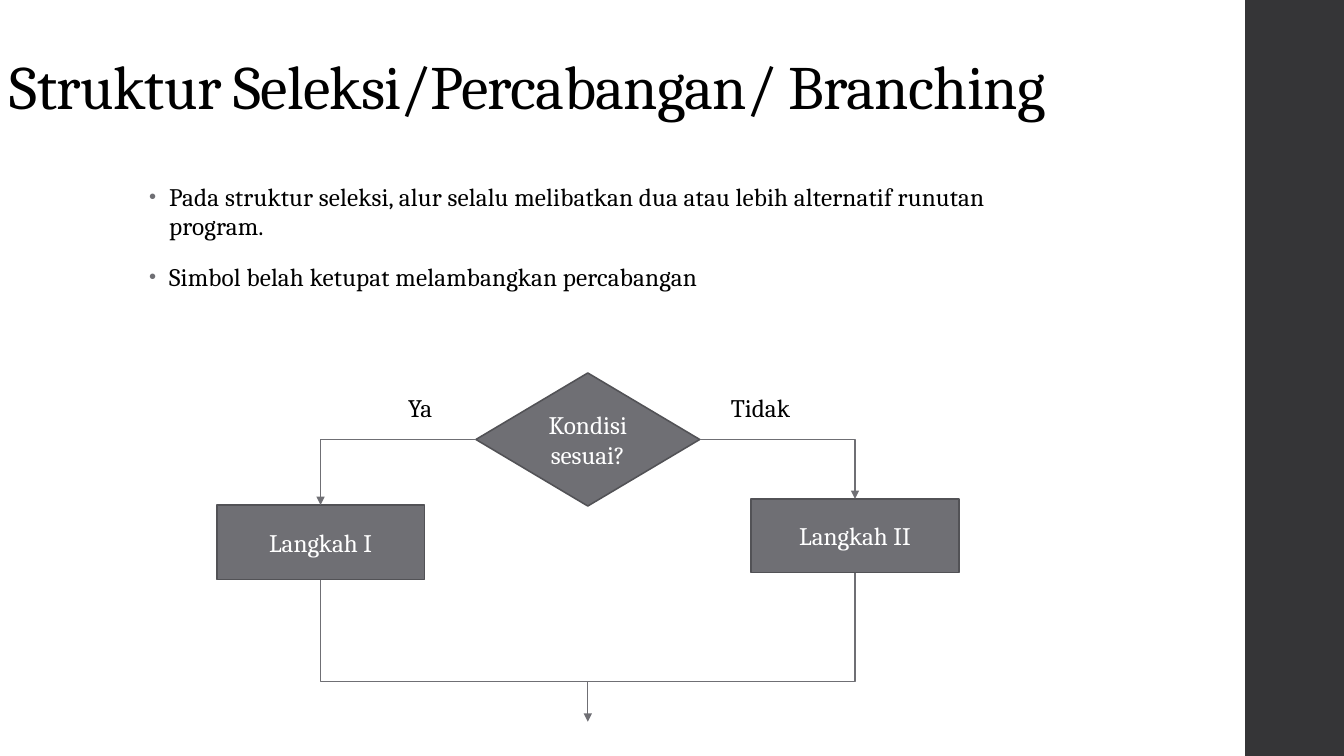
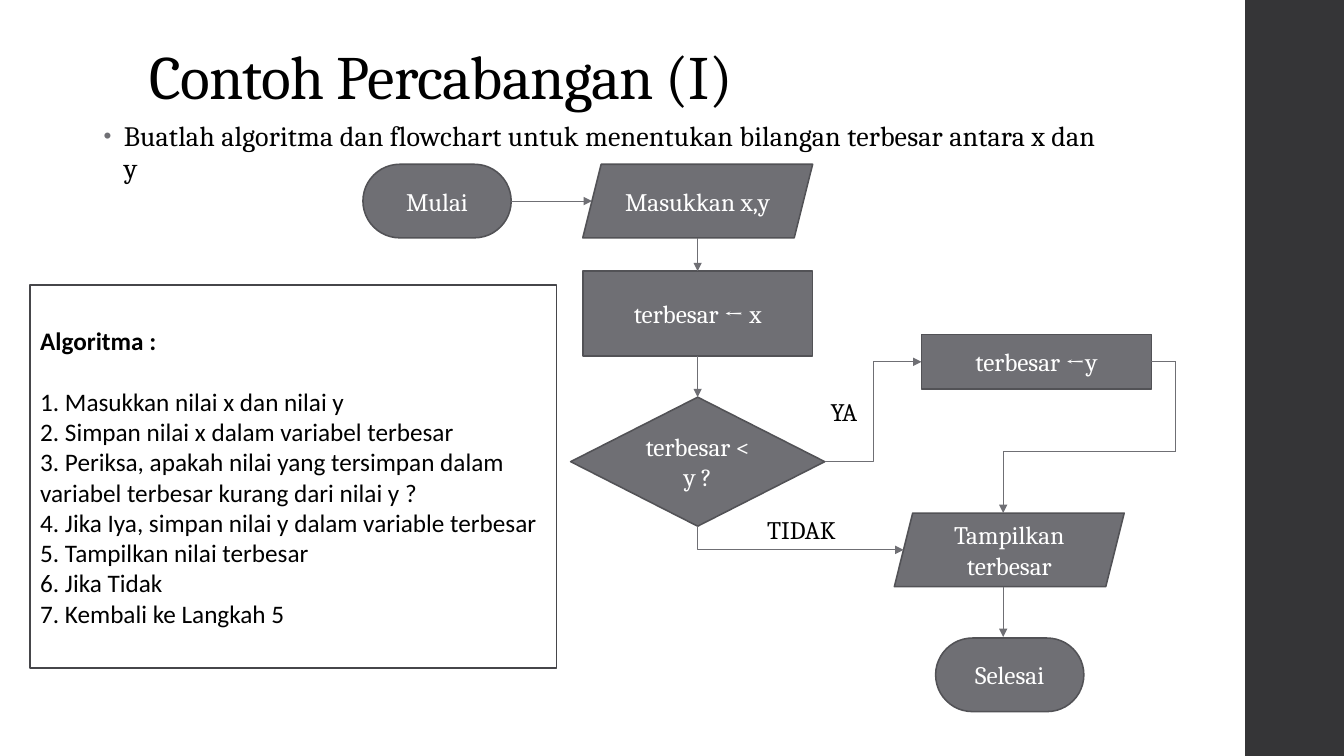
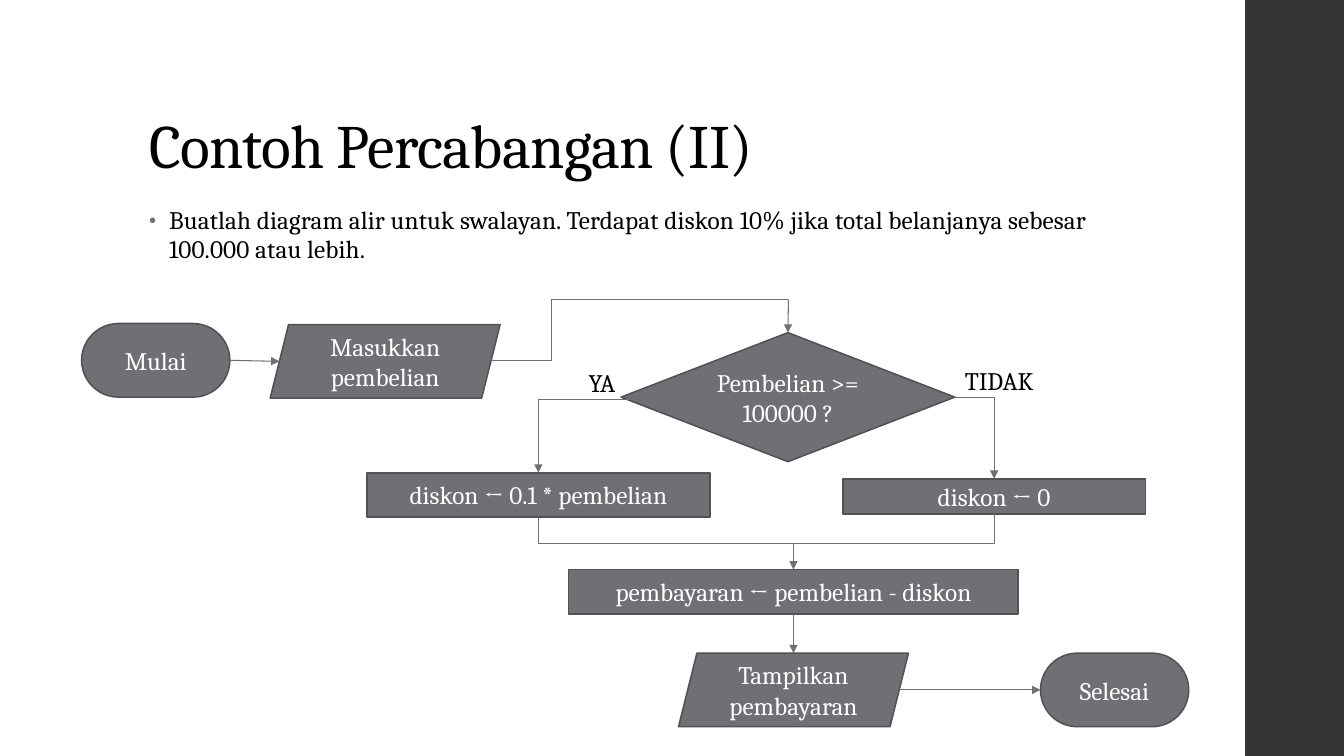
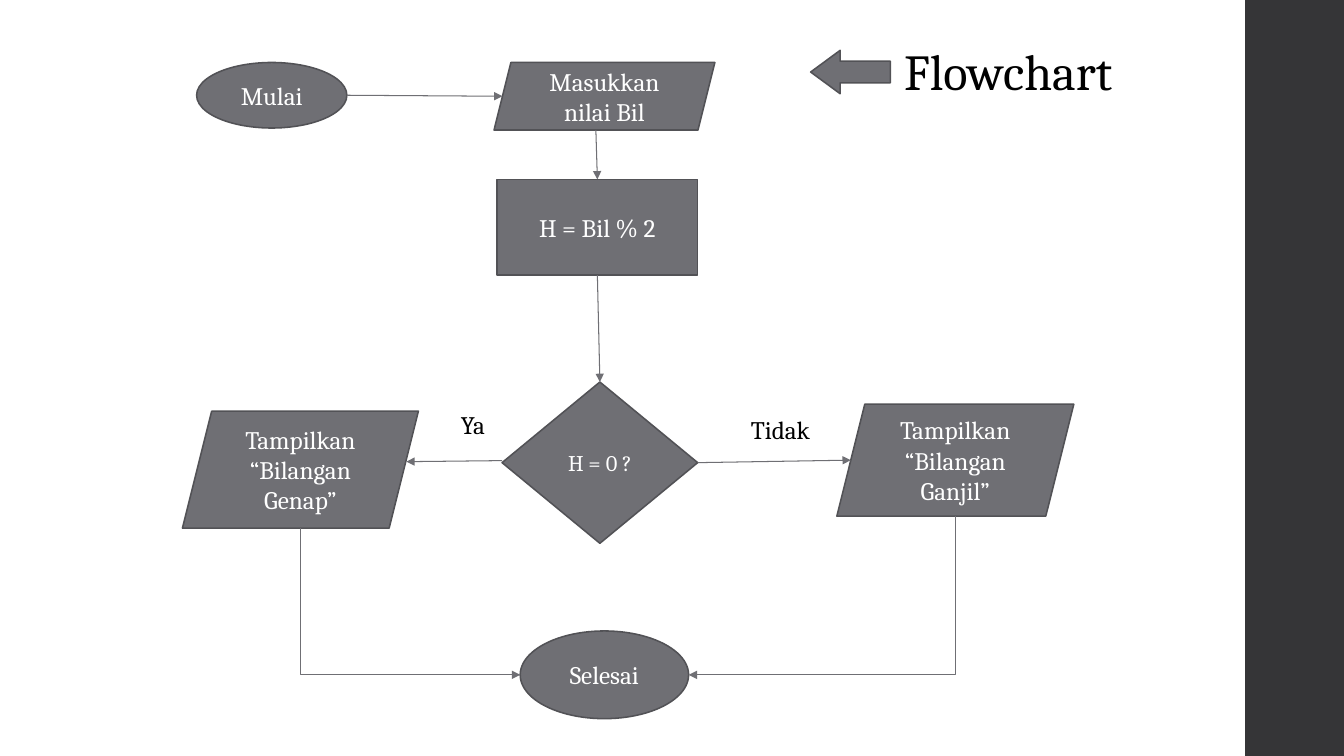
"""Build four slides on branching, with flowcharts drawn from node and route lists."""
from dataclasses import dataclass

from lxml import etree
from pptx import Presentation
from pptx import util as u
from pptx.dml.color import RGBColor
from pptx.enum import shapes, text
from pptx.oxml.ns import qn

PX = 9144
SLIDE_SIZE = (1333, 750)
BAND = (1235, 0, 100, 750)


@dataclass(frozen=True)
class Theme:
    """Colours, fonts and type sizes shared by all slides."""

    band: str = "353537"
    node: str = "6F6F74"
    edge: str = "525256"
    panel_edge: str = "46464A"
    ink: str = "000000"
    paper: str = "FFFFFF"
    serif: str = "Cambria"
    sans: str = "Calibri"
    title: int = 44
    heading: int = 36
    body: int = 18
    outline: float = 1.1
    wire: float = 0.75


THEME = Theme()
KINDS = {
    "process": shapes.MSO_SHAPE.RECTANGLE,
    "decision": shapes.MSO_SHAPE.DIAMOND,
    "data": shapes.MSO_SHAPE.PARALLELOGRAM,
    "pill": shapes.MSO_SHAPE.ROUNDED_RECTANGLE,
    "oval": shapes.MSO_SHAPE.OVAL,
    "arrow": shapes.MSO_SHAPE.LEFT_ARROW,
}
ADJUSTMENTS = {"pill": [0.5], "arrow": [0.5, 0.68]}
FOUR_SITES = {"top": 0, "left": 1, "bottom": 2, "right": 3}
SITES = {
    "process": FOUR_SITES,
    "decision": FOUR_SITES,
    "pill": FOUR_SITES,
    "oval": {"top": 0, "left": 2, "bottom": 4, "right": 6},
}
LEFT, CENTER = text.PP_ALIGN.LEFT, text.PP_ALIGN.CENTER
TOP, MIDDLE, BOTTOM = text.MSO_ANCHOR.TOP, text.MSO_ANCHOR.MIDDLE, text.MSO_ANCHOR.BOTTOM

SLIDES = [
    {
        "title": ("Struktur Seleksi/Percabangan/ Branching", (0, 40, 1198, 87)),
        "bullets": (
            [
                "Pada struktur seleksi, alur selalu melibatkan dua atau lebih alternatif runutan program.",
                "Simbol belah ketupat melambangkan percabangan",
            ],
            (138, 177, 940, 498),
            18,
        ),
        "nodes": [
            ("first", "process", "Langkah I", (215, 501, 206, 74)),
            ("second", "process", "Langkah II", (745, 495, 206, 73)),
            ("test", "decision", "Kondisi sesuai?", (472, 370, 222, 132)),
        ],
        "routes": [
            ("test.left", "first.top", "hv"),
            ("test.right", "second.top", "hv"),
            ((583, 676), (583, 716), ""),
        ],
        "joins": [
            ("first.bottom", (583, 676), "vh"),
            ("second.bottom", (583, 676), "vh"),
        ],
        "labels": [
            ("Ya", (395, 384, 55, 40)),
            ("Tidak", (715, 384, 118, 40)),
        ],
    },
    {
        "title": ("Contoh Percabangan (I)", (138, 40, 1060, 77)),
        "bullets": (
            ["Buatlah algoritma dan flowchart untuk menentukan bilangan terbesar antara x dan y"],
            (93, 115, 1012, 50),
            20,
        ),
        "nodes": [
            ("start", "pill", "Mulai", (360, 163, 147, 73)),
            ("input", "data", "Masukkan x,y", (578, 163, 228, 73)),
            ("store_x", "process", "terbesar ← x", (578, 269, 228, 84)),
            ("test", "decision", "terbesar < y ?", (566, 394, 252, 128)),
            ("store_y", "process", "terbesar ←y", (914, 332, 228, 54)),
            ("output", "data", "Tampilkan terbesar", (887, 509, 228, 73)),
            ("end", "pill", "Selesai", (928, 633, 147, 73)),
        ],
        "routes": [
            ("start.right", "input.left", ""),
            ("input.bottom", "store_x.top", ""),
            ("store_x.bottom", "test.top", ""),
            ("test.right", "store_y.left", "hvh"),
            ("test.bottom", "output.left", "vh"),
            ("store_y.right", (995, 509), [(1166, 359), (1166, 448), (995, 448)]),
            ((995, 582), (995, 632), ""),
        ],
        "labels": [
            ("TIDAK", (751, 505, 125, 40)),
            ("YA", (814, 388, 66, 41)),
        ],
        "panel": (
            "Algoritma :",
            [
                "1. Masukkan nilai x dan nilai y",
                "2. Simpan nilai x dalam variabel terbesar",
                "3. Periksa, apakah nilai yang tersimpan dalam variabel terbesar kurang dari nilai y ?",
                "4. Jika Iya, simpan nilai y dalam variable terbesar",
                "5. Tampilkan nilai terbesar",
                "6. Jika Tidak",
                "7. Kembali ke Langkah 5",
            ],
            (30, 283, 522, 380),
        ),
    },
    {
        "title": ("Contoh Percabangan (II)", (138, 40, 1060, 145)),
        "bullets": (
            [
                "Buatlah diagram alir untuk swalayan. Terdapat diskon 10% jika total belanjanya "
                "sebesar 100.000 atau lebih."
            ],
            (138, 200, 994, 118),
            18,
        ),
        "nodes": [
            ("start", "pill", "Mulai", (81, 321, 147, 73)),
            ("input", "data", "Masukkan pembelian", (268, 322, 228, 73)),
            ("test", "decision", "Pembelian >= 100000 ?", (616, 330, 331, 128)),
            ("discount", "process", "diskon ← 0.1 * pembelian", (364, 469, 340, 44)),
            ("no_discount", "process", "diskon ← 0", (836, 475, 300, 35)),
            ("payment", "process", "pembayaran ← pembelian - diskon", (564, 565, 446, 44)),
            ("output", "data", "Tampilkan pembayaran", (673, 648, 228, 73)),
            ("end", "pill", "Selesai", (1032, 648, 147, 73)),
        ],
        "routes": [
            ("start.right", "input.left", ""),
            ((487, 358), "test.top", [(547, 358), (547, 297), (782, 297)]),
            ((664, 396), "discount.top", "hv"),
            ("test.right", "no_discount.top", "hv"),
            ("discount.bottom", "payment.top", "vhv"),
            ("payment.bottom", "output.top", ""),
            ("output.right", "end.left", ""),
        ],
        "joins": [("no_discount.bottom", (787, 539), "vh")],
        "labels": [
            ("TIDAK", (947, 358, 125, 40)),
            ("YA", (574, 359, 66, 41)),
        ],
    },
    {
        "nodes": [
            ("start", "oval", "Mulai", (195, 62, 149, 65)),
            ("input", "data", "Masukkan nilai Bil", (490, 62, 219, 67)),
            ("remainder", "process", "H = Bil % 2", (493, 178, 199, 95)),
            ("test", "decision", "H = 0 ?", (498, 379, 194, 160), 16),
            ("even", "data", "Tampilkan “Bilangan Genap”", (181, 408, 234, 116)),
            ("odd", "data", "Tampilkan “Bilangan Ganjil”", (830, 401, 235, 111)),
            ("end", "oval", "Selesai", (516, 626, 167, 87)),
            ("pointer", "arrow", "", (804, 50, 79, 43)),
        ],
        "routes": [
            ("start.right", "input.left", ""),
            ((591, 129), "remainder.top", ""),
            ("remainder.bottom", "test.top", ""),
            ("test.right", "odd.left", ""),
            ((498, 457), (403, 458), ""),
            ("even.bottom", "end.left", "vh"),
            ("odd.bottom", "end.right", "vh"),
        ],
        "cards": [
            ("Ya", (440, 403, 58, 36), THEME.body, THEME.paper, None),
            ("Tidak", (718, 408, 112, 36), THEME.body, THEME.paper, None),
            ("Flowchart", (776, 30, 448, 80), THEME.heading, None, THEME.paper),
        ],
    },
]


def emu(*lengths):
    return [round(length * PX) for length in lengths]


def write(shape, paragraphs, *, size=THEME.body, font=THEME.serif, color=THEME.ink,
          align=LEFT, anchor=TOP, bold_first=False, gap=0, line=None, tracking=0):
    """Fill a shape with paragraphs in one format; gap follows the first one."""
    frame = shape.text_frame
    frame.word_wrap = True
    frame.vertical_anchor = anchor
    for index, content in enumerate(paragraphs):
        paragraph = frame.add_paragraph() if index else frame.paragraphs[0]
        paragraph.alignment = align
        if line:
            paragraph.line_spacing = line
        if gap and index == 1:
            paragraph.space_before = u.Pt(gap)
        run = paragraph.add_run()
        run.text = content
        run.font.size = u.Pt(size)
        run.font.name = font
        run.font.bold = bold_first and index == 0
        run.font.color.rgb = RGBColor.from_string(color)
        if tracking:
            run._r.get_or_add_rPr().set("spc", str(tracking))
    return frame


def add_block(slide, kind, box, fill, outline=None):
    shape = slide.shapes.add_shape(KINDS[kind], *emu(*box))
    shape.shadow.inherit = False
    for index, value in enumerate(ADJUSTMENTS.get(kind, [])):
        shape.adjustments[index] = value
    if fill:
        shape.fill.solid()
        shape.fill.fore_color.rgb = RGBColor.from_string(fill)
    else:
        shape.fill.background()
    if outline:
        shape.line.color.rgb = RGBColor.from_string(outline)
        shape.line.width = u.Pt(THEME.outline)
    else:
        shape.line.fill.background()
    return shape


def add_text(slide, paragraphs, box, **style):
    return write(slide.shapes.add_textbox(*emu(*box)), paragraphs, **style)


def add_bullets(slide, items, box, size):
    frame = add_text(slide, items, box, size=size, line=0.95, tracking=10)
    for paragraph in frame.paragraphs:
        paragraph.space_before, paragraph.space_after = u.Pt(14), u.Pt(2)
        properties = paragraph._p.get_or_add_pPr()
        indent = emu(20)[0]
        properties.set("marL", str(indent))
        properties.set("indent", str(-indent))
        color = etree.SubElement(properties, qn("a:buClr"))
        etree.SubElement(color, qn("a:srgbClr"), val=THEME.node)
        etree.SubElement(properties, qn("a:buSzPct"), val="80000")
        etree.SubElement(properties, qn("a:buFont"), typeface="Arial")
        etree.SubElement(properties, qn("a:buChar"), char="•")


def anchors(kind, box):
    """Return the four points of a node where routes may dock."""
    left, top, width, height = box
    slant = min(width, height) / 8 if kind == "data" else 0
    x, y = left + width / 2, top + height / 2
    return {
        "left": (left + slant, y),
        "right": (left + width - slant, y),
        "top": (x, top),
        "bottom": (x, top + height),
    }


def add_line(slide, start, end, arrow, kind=shapes.MSO_CONNECTOR.STRAIGHT):
    connector = slide.shapes.add_connector(kind, *emu(*start, *end))
    connector.line.color.rgb = RGBColor.from_string(THEME.node)
    connector.line.width = u.Pt(THEME.wire)
    properties = connector._element.spPr
    if arrow:
        etree.SubElement(properties.find(qn("a:ln")), qn("a:tailEnd"), type="triangle")
    etree.SubElement(properties, qn("a:effectLst"))
    return connector


def add_elbow(slide, start, end, rule, arrow):
    """Draw a bent connector; hv goes across then down, vh down then across."""
    connector = add_line(slide, start, end, arrow, shapes.MSO_CONNECTOR.ELBOW)
    properties = connector._element.spPr
    properties.find(qn("a:prstGeom")).set("prst", f"bentConnector{len(rule)}")
    if rule.startswith("v"):
        (x0, y0), (x1, y1) = start, end
        width, height = abs(y1 - y0), abs(x1 - x0)
        connector.left, connector.top, connector.width, connector.height = emu(
            (x0 + x1 - width) / 2, (y0 + y1 - height) / 2, width, height)
        frame = properties.find(qn("a:xfrm"))
        frame.set("rot", "16200000" if x1 > x0 else "5400000")
        frame.set("flipH", "1" if x1 > x0 else "0")
    return connector


def add_route(slide, docks, start, end, rule, arrow):
    stops = [docks.get(stop, (stop, None)) for stop in (start, end)]
    (first, last) = (point for point, _ in stops)
    if not isinstance(rule, str):
        points = [first, *rule, last]
        for index, (a, b) in enumerate(zip(points, points[1:])):
            add_line(slide, a, b, arrow and index == len(rule))
    elif rule:
        connector = add_elbow(slide, first, last, rule, arrow)
        links = connector._element.nvCxnSpPr.cNvCxnSpPr
        for tag, (_, site) in zip(("a:stCxn", "a:endCxn"), stops):
            if site:
                etree.SubElement(links, qn(tag), id=str(site[0]), idx=str(site[1]))
    else:
        add_line(slide, first, last, arrow)


def add_flowchart(slide, content):
    docks = {}
    for name, kind, caption, box, *size in content["nodes"]:
        shape = add_block(slide, kind, box, THEME.node, THEME.edge)
        if caption:
            write(shape, [caption], size=size[0] if size else THEME.body,
                  color=THEME.paper, align=CENTER, anchor=MIDDLE)
        for side, point in anchors(kind, box).items():
            site = (shape.shape_id, SITES[kind][side]) if kind in SITES else None
            docks[f"{name}.{side}"] = (point, site)
    for group, arrow in (("routes", True), ("joins", False)):
        for route in content.get(group, []):
            add_route(slide, docks, *route, arrow)
    for caption, box in content.get("labels", []):
        add_text(slide, [caption], box)
    for caption, box, size, fill, outline in content.get("cards", []):
        card = add_block(slide, "process", box, fill, outline)
        write(card, [caption], size=size, align=CENTER, anchor=MIDDLE)


def build_slide(presentation, content):
    slide = presentation.slides.add_slide(presentation.slide_layouts[6])
    add_block(slide, "process", BAND, THEME.band)
    if "title" in content:
        title, box = content["title"]
        add_text(slide, [title], box, size=THEME.title, anchor=BOTTOM, line=0.9, tracking=-50)
    if "bullets" in content:
        add_bullets(slide, *content["bullets"])
    add_flowchart(slide, content)
    if "panel" in content:
        heading, steps, box = content["panel"]
        panel = add_block(slide, "process", box, THEME.paper, THEME.panel_edge)
        write(panel, [heading, *steps], font=THEME.sans, anchor=MIDDLE,
              bold_first=True, gap=22)


def main():
    presentation = Presentation()
    presentation.slide_width, presentation.slide_height = emu(*SLIDE_SIZE)
    for content in SLIDES:
        build_slide(presentation, content)
    presentation.save("out.pptx")


if __name__ == "__main__":
    main()
